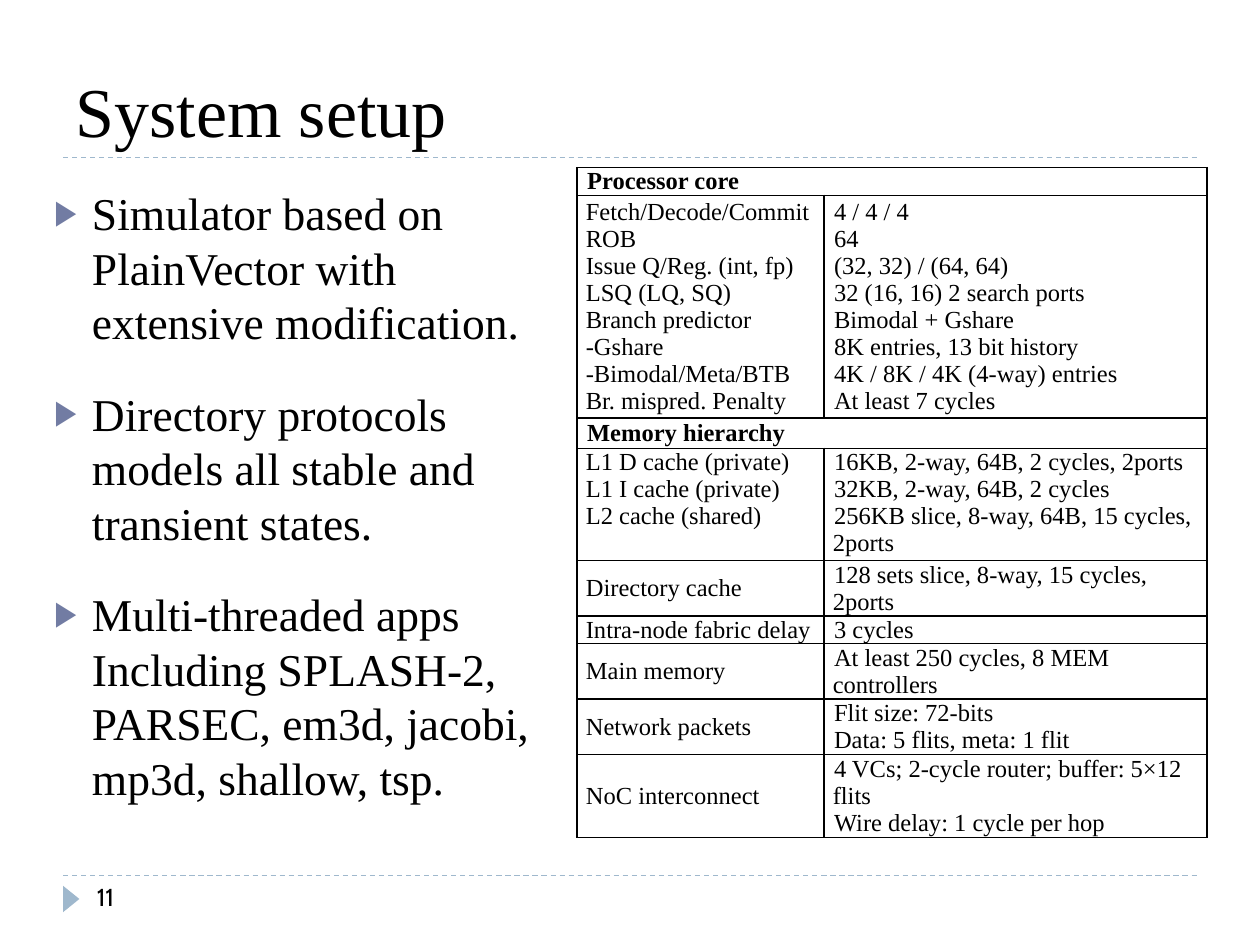
from dataclasses import dataclass

from lxml import etree
from pptx import Presentation
from pptx.dml.color import RGBColor
from pptx.enum import dml, shapes, text
from pptx.oxml import ns
from pptx.util import Inches, Pt


@dataclass(frozen=True)
class Theme:
    """Colours, fonts and type sizes of the deck."""
    ink: str = "000000"
    rule: str = "9FB8CD"
    mark: str = "727CA3"
    serif: str = "Times New Roman"
    sans: str = "Cabin"
    title: int = 40
    body: int = 26
    cell: int = 14
    foot: int = 14


LOOK = Theme()
POINTS = [
    "Simulator based on PlainVector with extensive modification.",
    "Directory protocols models all stable and transient states.",
    "Multi-threaded apps Including SPLASH-2, PARSEC, em3d, jacobi, "
    "mp3d, shallow, tsp.",
]
COLS = [1.96, 3.04]
ROWS = [
    (0.22, ["Processor core"]),
    (1.77,
     ["Fetch/Decode/Commit\nROB\nIssue Q/Reg. (int, fp)\nLSQ (LQ, SQ)\n"
      "Branch predictor\n-Gshare\n-Bimodal/Meta/BTB\nBr. mispred. Penalty",
      "4 / 4 / 4\n64\n(32, 32) / (64, 64)\n32 (16, 16) 2 search ports\n"
      "Bimodal + Gshare\n8K entries, 13 bit history\n"
      "4K / 8K / 4K (4-way) entries\nAt least 7 cycles"]),
    (0.24, ["Memory hierarchy"]),
    (0.89,
     ["L1 D cache (private)\nL1 I cache (private)\nL2 cache (shared)",
      "16KB, 2-way, 64B, 2 cycles, 2ports\n32KB, 2-way, 64B, 2 cycles\n"
      "256KB slice, 8-way, 64B, 15 cycles, 2ports"]),
    (0.44, ["Directory cache", "128 sets slice, 8-way, 15 cycles, 2ports"]),
    (0.22, ["Intra-node fabric delay", "3 cycles"]),
    (0.44, ["Main memory", "At least 250 cycles, 8 MEM controllers"]),
    (0.44, ["Network packets", "Flit size: 72-bits\nData: 5 flits, meta: 1 flit"]),
    (0.66, ["NoC interconnect",
            "4 VCs; 2-cycle router; buffer: 5×12 flits\nWire delay: 1 cycle per hop"]),
]


def node(root, tag, **attrs):
    """Append a child element with the given attributes."""
    return etree.SubElement(root, ns.qn(tag), attrs)


def place(shape, box):
    """Move a shape to a box given in inches."""
    shape.left, shape.top, shape.width, shape.height = map(Inches, box)


def style(frame, size, face, bold=False):
    """Format every run of a text frame."""
    for para in frame.paragraphs:
        para.alignment = text.PP_ALIGN.LEFT
        for run in para.runs:
            font = run.font
            font.size, font.name, font.bold = Pt(size), face, bold
            font.color.rgb = RGBColor.from_string(LOOK.ink)


def rule(slide, left, top, width):
    """Draw a dashed horizontal rule."""
    line = slide.shapes.add_connector(
        shapes.MSO_CONNECTOR.STRAIGHT, Inches(left), Inches(top),
        Inches(left + width), Inches(top))
    line.line.color.rgb = RGBColor.from_string(LOOK.rule)
    line.line.width = Pt(0.75)
    line.line.dash_style = dml.MSO_LINE.DASH
    node(line._element.spPr, "a:effectLst")


def header(slide, box):
    """Fill the title and underline it."""
    title = slide.shapes.title
    place(title, box)
    frame = title.text_frame
    frame.text = "System setup"
    frame.vertical_anchor = text.MSO_ANCHOR.BOTTOM
    frame.auto_size = text.MSO_AUTO_SIZE.NONE
    style(frame, LOOK.title, LOOK.serif)
    left, top, width, height = box
    rule(slide, left, top + height, width)


def points(slide, box):
    """Fill the body with arrow bullets."""
    body = slide.placeholders[1]
    place(body, box)
    frame = body.text_frame
    frame.text = "\n".join(POINTS)
    frame.auto_size = text.MSO_AUTO_SIZE.NONE
    style(frame, LOOK.body, LOOK.serif)
    for i, para in enumerate(frame.paragraphs):
        para.line_spacing = 1.0
        para.space_before = Pt(21 if i else 0)
        props = para._p.get_or_add_pPr()
        props.set("marL", str(Inches(0.3)))
        props.set("indent", str(Inches(-0.3)))
        node(node(props, "a:buClr"), "a:srgbClr", val=LOOK.mark)
        node(props, "a:buSzPct", val="76000")
        node(props, "a:buChar", char="▶")


def border(cell):
    """Rule all four sides of a cell."""
    props = cell._tc.get_or_add_tcPr()
    for i, side in enumerate("LRTB"):
        line = node(props, f"a:ln{side}", w=str(Pt(1)))
        node(node(line, "a:solidFill"), "a:srgbClr", val=LOOK.ink)
        props.insert(i, line)


def fill(cell, words, bold, indent):
    """Write and format one table cell."""
    cell.margin_left = cell.margin_right = Inches(0.07)
    cell.margin_top = cell.margin_bottom = 0
    cell.vertical_anchor = text.MSO_ANCHOR.MIDDLE
    cell.text_frame.text = words
    style(cell.text_frame, LOOK.cell, LOOK.serif, bold)
    for para in cell.text_frame.paragraphs:
        para._p.get_or_add_pPr().set("indent", str(Inches(indent)))


def setup(slide, box):
    """Build the parameter table."""
    table = slide.shapes.add_table(len(ROWS), len(COLS), *map(Inches, box)).table
    table.first_row = table.horz_banding = False
    for col, width in zip(table.columns, COLS):
        col.width = Inches(width)
    for r, (height, words) in enumerate(ROWS):
        table.rows[r].height = Inches(height)
        head = len(words) == 1
        for c in range(len(COLS)):
            cell = table.cell(r, c)
            cell.fill.background()
            border(cell)
            if c < len(words):
                fill(cell, words[c], head, 0.01 if head or c else -0.01)
        if head:
            table.cell(r, 0).merge(table.cell(r, 1))
    for cell in table.rows[3].cells:
        cell.vertical_anchor = text.MSO_ANCHOR.TOP


def footer(slide, box):
    """Draw the rule, the arrow and the page number."""
    left, top, width, height = box
    rule(slide, left, top, width)
    arrow = slide.shapes.add_shape(
        shapes.MSO_SHAPE.ISOSCELES_TRIANGLE, Inches(left - 0.04),
        Inches(top + 0.12), Inches(0.21), Inches(0.13))
    arrow.rotation = 90
    arrow.shadow.inherit = False
    arrow.fill.solid()
    arrow.fill.fore_color.rgb = RGBColor.from_string(LOOK.rule)
    arrow.line.fill.background()
    page = slide.shapes.add_textbox(
        Inches(left + 0.17), Inches(top), Inches(2.17), Inches(height))
    frame = page.text_frame
    frame.word_wrap = True
    frame.vertical_anchor = text.MSO_ANCHOR.TOP
    frame.text = "11"
    style(frame, LOOK.foot, LOOK.sans)


def main():
    """Build and save the slide."""
    deck = Presentation()
    deck.slide_width, deck.slide_height = Inches(10), Inches(7.5)
    slide = deck.slides.add_slide(deck.slide_layouts[1])
    header(slide, (0.5, 0.17, 9, 1.08))
    points(slide, (0.33, 1.42, 4.08, 5.42))
    setup(slide, (4.58, 1.33, sum(COLS), sum(row[0] for row in ROWS)))
    footer(slide, (0.5, 6.95, 9, 0.4))
    deck.save("out.pptx")


if __name__ == "__main__":
    main()
